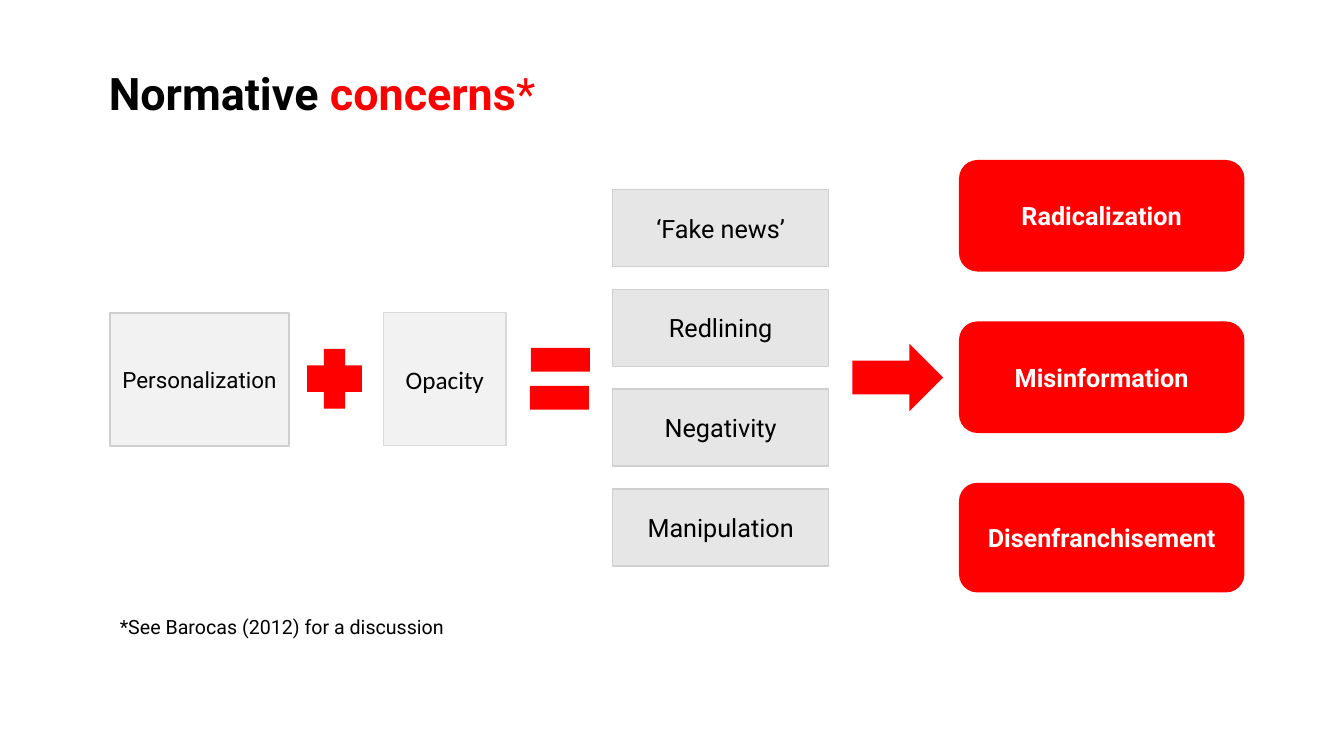
from dataclasses import dataclass
from pptx import Presentation
from pptx.dml.color import RGBColor as RGB
from pptx.enum.shapes import MSO_SHAPE as Kind
from pptx.enum.text import MSO_ANCHOR as Anchor, PP_ALIGN as Align
from pptx.util import Pt


@dataclass
class Theme:
    font: str = "Roboto"
    alt: str = "Calibri"
    black: str = "000000"
    white: str = "FFFFFF"
    red: str = "FF0000"
    pale: str = "F2F2F2"
    gray: str = "E7E6E6"
    edge: str = "D0CECE"
    light: str = "D9D9D9"
    title: int = 32
    label: int = 18
    small: int = 16
    note: int = 14


theme = Theme()


def style(run, size, color, bold=False, font=theme.font):
    run.font.name = font
    run.font.size = Pt(size)
    run.font.bold = bold
    run.font.color.rgb = RGB.from_string(color)


def block(kind, area, fill, edge=None, text="", size=theme.label,
          color=theme.black, bold=False, font=theme.font):
    shape = slide.shapes.add_shape(kind, *map(Pt, area))
    shape.shadow.inherit = False
    shape.fill.solid()
    shape.fill.fore_color.rgb = RGB.from_string(fill)
    if edge:
        shape.line.color.rgb = RGB.from_string(edge)
        shape.line.width = Pt(1)
    else:
        shape.line.fill.background()
    if text:
        frame = shape.text_frame
        frame.text = text
        frame.word_wrap = True
        frame.vertical_anchor = Anchor.MIDDLE
        para = frame.paragraphs[0]
        para.alignment = Align.CENTER
        style(para.runs[0], size, color, bold, font)
    return shape


deck = Presentation()
deck.slide_width = Pt(960)
deck.slide_height = Pt(540)
slide = deck.slides.add_slide(deck.slide_layouts[6])

title = slide.shapes.add_textbox(Pt(70.6), Pt(42.5), Pt(857.5), Pt(104.4)).text_frame
title.word_wrap = True
title.margin_top = Pt(8.64)
head = title.paragraphs[0]
head.line_spacing = 0.9
for text, color, bold in (
    ("Normative ", theme.black, True),
    ("concerns", theme.red, True),
    ("*", theme.red, False),
):
    run = head.add_run()
    run.text = text
    style(run, theme.title, color, bold)

note = slide.shapes.add_textbox(Pt(78.5), Pt(435.6), Pt(387.4), Pt(24.5)).text_frame
note.word_wrap = True
note.text = "*See Barocas (2012) for a discussion"
style(note.paragraphs[0].runs[0], theme.note, theme.black)

block(Kind.RECTANGLE, (78.5, 223.7, 128, 95), theme.pale, theme.edge,
      "Personalization", theme.small)
block(Kind.RECTANGLE, (274.1, 223.3, 87.3, 95), theme.pale, theme.light,
      "Opacity", font=theme.alt)

plus = block(Kind.CROSS, (219.5, 249.2, 39, 42.6), theme.red)
plus.adjustments[0] = 0.305
for left, top in ((379.3, 248.5), (378.6, 275.6)):
    block(Kind.RECTANGLE, (left, top, 42, 17), theme.red)
block(Kind.RIGHT_ARROW, (608.9, 245.6, 64.8, 48.2), theme.red)

harms = "‘Fake news’", "Redlining", "Negativity", "Manipulation"
for row, text in enumerate(harms):
    block(Kind.RECTANGLE, (437.6, 135.4 + row * 71.3, 154.3, 55), theme.gray,
          theme.edge, text)

ends = ("Radicalization", 79.7), ("Misinformation", 79.7), ("Disenfranchisement", 78.3)
for row, (text, high) in enumerate(ends):
    block(Kind.ROUNDED_RECTANGLE, (685, 114.3 + row * 115.3, 203.9, high), theme.red,
          text=text, color=theme.white, bold=True)

deck.save("out.pptx")
